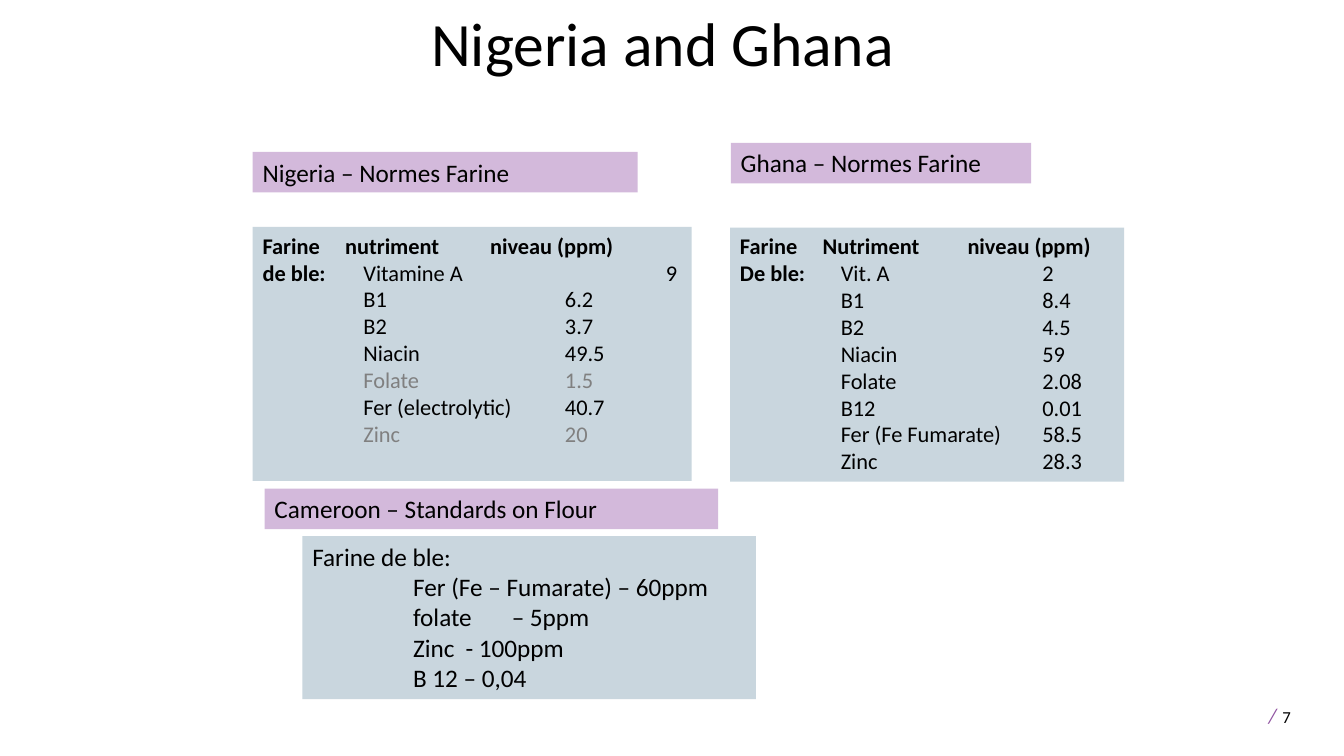
import pptx
import pptx.dml.color
import pptx.enum.shapes
import pptx.enum.text
import pptx.util
from lxml import etree

Pt = pptx.util.Pt
RGBColor = pptx.dml.color.RGBColor
ALIGN = pptx.enum.text.PP_ALIGN
ANCHOR = pptx.enum.text.MSO_ANCHOR
RECT = pptx.enum.shapes.MSO_SHAPE.RECTANGLE

BLACK = RGBColor(0x00, 0x00, 0x00)
GREY = RGBColor(0x80, 0x80, 0x80)
PURPLE = RGBColor(0x90, 0x53, 0xA1)
LILAC = RGBColor(0xD3, 0xB9, 0xDB)
BLUE_GREY = RGBColor(0xC9, 0xD6, 0xDE)

HEAD_TABS = (59, 162.5)
ROW_TABS = (72, 216)

NIGERIA = [("B1", "6.2"), ("B2", "3.7"), ("Niacin", "49.5"), ("Folate", "1.5"),
           ("Fer (electrolytic)", "40.7"), ("Zinc", "20")]
NIGERIA_GREY = ("Folate", "Zinc")
GHANA = [("B1", "8.4"), ("B2", "4.5"), ("Niacin", "59"), ("Folate", "2.08"),
         ("B12", "0.01"), ("Fer (Fe Fumarate)", "58.5"), ("Zinc", "28.3")]
CAMEROON = [("\tFer (Fe – Fumarate) – 60ppm", (72,)),
            ("\tfolate\t– 5ppm", (72, 142.5)),
            ("\tZinc\t- 100ppm", (72, 109.5)),
            ("\tB 12 – 0,04", (72,))]


class Deck:
    font = "Calibri"

    def __init__(self):
        self.prs = pptx.Presentation()
        self.prs.slide_width = Pt(960)
        self.prs.slide_height = Pt(540)
        self.s = self.prs.slides.add_slide(self.prs.slide_layouts[6])

    def frame(self, sp):
        tf = sp.text_frame
        tf.word_wrap = True
        tf.vertical_anchor = ANCHOR.TOP
        return tf

    def text(self, x, y, w, h):
        return self.frame(self.s.shapes.add_textbox(Pt(x), Pt(y), Pt(w), Pt(h)))

    def panel(self, x, y, w, h, fill):
        sp = self.s.shapes.add_shape(RECT, Pt(x), Pt(y), Pt(w), Pt(h))
        sp.shadow.inherit = False
        sp.fill.solid()
        sp.fill.fore_color.rgb = fill
        sp.line.fill.background()
        return self.frame(sp)

    def para(self, tf, first=False, tabs=(), align=ALIGN.LEFT):
        p = tf.paragraphs[0] if first else tf.add_paragraph()
        p.alignment = align
        if tabs:
            ns = pptx.oxml.ns.qn
            tab_list = etree.SubElement(p._p.get_or_add_pPr(), ns("a:tabLst"))
            for pos in tabs:
                etree.SubElement(tab_list, ns("a:tab"), pos=str(int(Pt(pos))), algn="l")
        return p

    def run(self, p, text, size, color=BLACK, bold=False, italic=False):
        r = p.add_run()
        r.text = text
        r.font.name = self.font
        r.font.size = Pt(size)
        r.font.color.rgb = color
        r.font.bold = bold
        r.font.italic = italic

    def label(self, x, y, w, text):
        tf = self.panel(x, y, w, 29, LILAC)
        self.run(self.para(tf, True), text, 18)

    def nutrients(self, x, y, w, heads, side, first_row, first_tabs, rows, greyed=()):
        tf = self.panel(x, y, w, 181.5, BLUE_GREY)
        self.run(self.para(tf, True, HEAD_TABS), "\t".join(heads), 16, bold=True)
        p = self.para(tf, tabs=first_tabs)
        self.run(p, side, 16, bold=True)
        self.run(p, "\t" + "\t".join(first_row), 16)
        for name, level in rows:
            color = GREY if name in greyed else BLACK
            self.run(self.para(tf, tabs=ROW_TABS), f"\t{name}\t{level}", 16, color)


def main():
    d = Deck()

    p = d.para(d.text(167.5, 6, 612, 84), True, align=ALIGN.CENTER)
    p.line_spacing = 0.9
    d.run(p, "Nigeria and Ghana", 44)

    d.label(522, 102, 214.5, "Ghana – Normes Farine")
    d.nutrients(521.5, 162.5, 281.5, ("Farine", "Nutriment", "niveau (ppm)"),
                "De ble:", ("Vit. A", "2"), ROW_TABS, GHANA)

    d.label(180.5, 108.5, 275, "Nigeria – Normes Farine")
    d.nutrients(180.5, 162, 313.5, ("Farine", "nutriment", "niveau (ppm)"),
                "de ble:", ("Vitamine A", "9"), (72, 288), NIGERIA, NIGERIA_GREY)

    d.label(189, 349, 324, "Cameroon – Standards on Flour")
    tf = d.panel(216, 383, 324, 116.5, BLUE_GREY)
    d.run(d.para(tf, True), "Farine de ble:", 18)
    for line, tabs in CAMEROON:
        d.run(d.para(tf, tabs=tabs), line, 18)

    p = d.para(d.text(895, 495.5, 62.5, 29), True)
    d.run(p, " ", 18)
    d.run(p, "/", 15, PURPLE, italic=True)
    d.run(p, " ", 18)
    d.run(p, "7", 12)

    d.prs.save("out.pptx")


if __name__ == "__main__":
    main()
